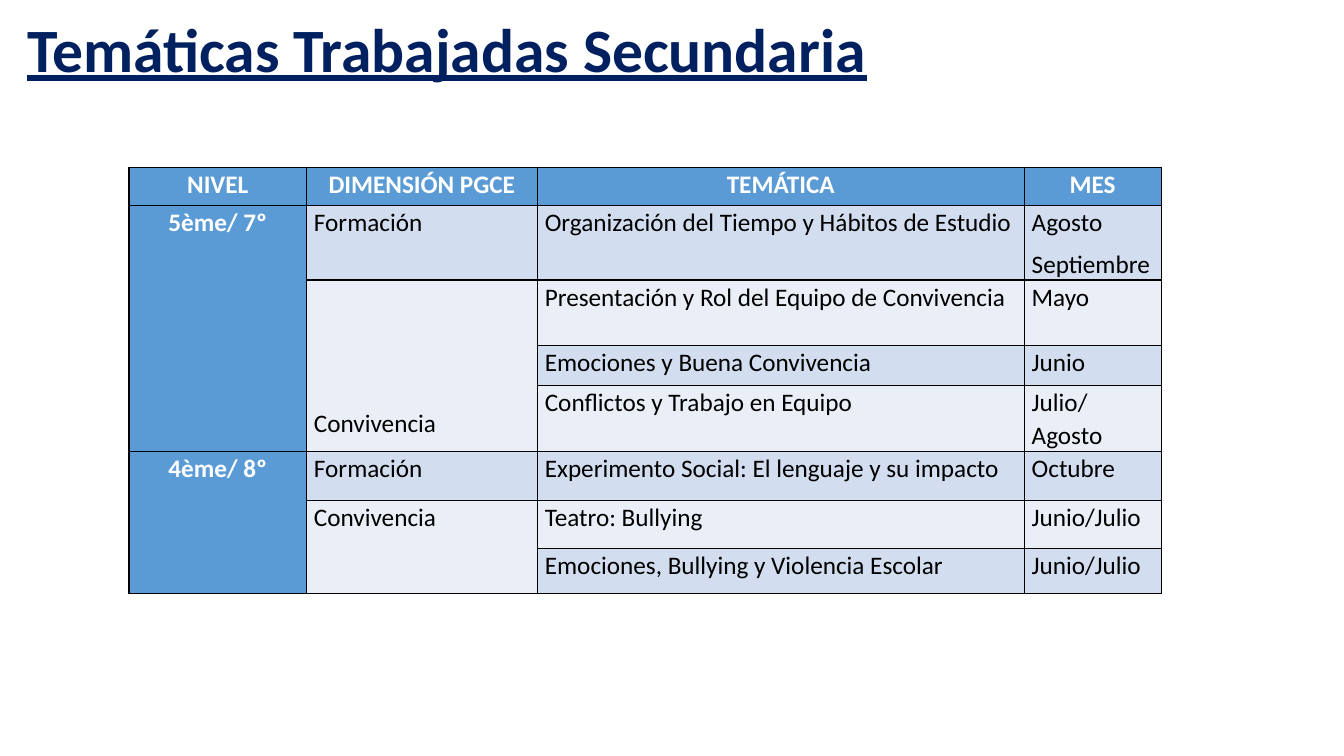
from dataclasses import dataclass

from lxml.etree import SubElement
from pptx import Presentation
from pptx.dml.color import RGBColor
from pptx.enum.text import MSO_ANCHOR, PP_ALIGN
from pptx.oxml.ns import qn
from pptx.slide import Slide
from pptx.table import Table, _Cell
from pptx.util import Pt


@dataclass(frozen=True)
class Theme:
    font: str = "Calibri"
    head: int = 44
    body: int = 18
    navy: str = "002060"
    blue: str = "5B9BD5"
    bands: tuple[str, str] = ("D2DEEF", "EAEFF7")
    white: str = "FFFFFF"
    black: str = "000000"


@dataclass(frozen=True)
class Entry:
    row: int
    col: int
    text: str
    span: int = 1
    low: bool = False


THEME = Theme()
WIDTHS = (126.7, 164.9, 347.8, 97.9)
HEIGHTS = (27.5, 53, 46.5, 29, 46.5, 35, 34.5, 32)
HEADS = ("NIVEL", "DIMENSIÓN PGCE", "TEMÁTICA", "MES")
GROUPS = (
    Entry(1, 0, "5ème/ 7º", 4),
    Entry(1, 1, "Formación"),
    Entry(2, 1, "Convivencia", 3, True),
    Entry(5, 0, "4ème/ 8º", 3),
    Entry(5, 1, "Formación"),
    Entry(6, 1, "Convivencia", 2),
)
TOPICS = (
    ("Organización del Tiempo y Hábitos de Estudio", "Agosto\nSeptiembre"),
    ("Presentación y Rol del Equipo de Convivencia", "Mayo"),
    ("Emociones y Buena Convivencia", "Junio"),
    ("Conflictos y Trabajo en Equipo", "Julio/Agosto"),
    ("Experimento Social: El lenguaje y su impacto", "Octubre"),
    ("Teatro: Bullying", "Junio/Julio"),
    ("Emociones, Bullying y Violencia Escolar", "Junio/Julio"),
)


def add_title(slide: Slide, text: str) -> None:
    title = slide.shapes.title
    title.left, title.top = Pt(12.25), Pt(-15)
    title.width, title.height = Pt(925), Pt(104.5)
    frame = title.text_frame
    frame.text = text
    frame.word_wrap = True
    frame.vertical_anchor = MSO_ANCHOR.MIDDLE
    line = frame.paragraphs[0]
    line.alignment = PP_ALIGN.LEFT
    line.line_spacing = 0.9
    font = line.font
    font.name, font.size = THEME.font, Pt(THEME.head)
    font.bold = font.underline = True
    font.color.rgb = RGBColor.from_string(THEME.navy)


def style_cell(cell: _Cell, row: int, col: int) -> None:
    props = cell._tc.get_or_add_tcPr()
    for side in ("lnL", "lnR", "lnT", "lnB"):
        edge = SubElement(props, qn(f"a:{side}"), w=str(Pt(1)))
        fill = SubElement(edge, qn("a:solidFill"))
        SubElement(fill, qn("a:srgbClr"), val=THEME.black)
    strong = row == 0 or col == 0
    tone = THEME.blue if strong else THEME.bands[(row - 1) % 2]
    cell.fill.solid()
    cell.fill.fore_color.rgb = RGBColor.from_string(tone)
    cell.margin_left = cell.margin_right = Pt(5.4)
    cell.margin_top = cell.margin_bottom = Pt(0)


def write_cell(table: Table, entry: Entry) -> None:
    cell = table.cell(entry.row, entry.col)
    if entry.span > 1:
        cell.merge(table.cell(entry.row + entry.span - 1, entry.col))
    if entry.low:
        cell.vertical_anchor = MSO_ANCHOR.BOTTOM
        cell.margin_bottom = Pt(9)
    strong = entry.row == 0 or entry.col == 0
    cell.text_frame.text = entry.text
    for line in cell.text_frame.paragraphs:
        line.alignment = PP_ALIGN.CENTER if strong else PP_ALIGN.JUSTIFY
        line.line_spacing = 1.07
        line.space_before = Pt(6)
        line.font.name, line.font.size = THEME.font, Pt(THEME.body)
        line.font.bold = strong
        line.font.color.rgb = RGBColor.from_string(THEME.white if strong else THEME.black)


def add_grid(slide: Slide) -> None:
    table = slide.shapes.add_table(
        len(HEIGHTS), len(WIDTHS), Pt(92.2), Pt(119.5), Pt(sum(WIDTHS)), Pt(sum(HEIGHTS))
    ).table
    table.first_row = table.horz_banding = False
    for column, width in zip(table.columns, WIDTHS):
        column.width = Pt(width)
    for line, height in zip(table.rows, HEIGHTS):
        line.height = Pt(height)
    for row in range(len(HEIGHTS)):
        for col in range(len(WIDTHS)):
            style_cell(table.cell(row, col), row, col)
    heads = [Entry(0, col, text) for col, text in enumerate(HEADS)]
    topics = [
        Entry(row, col, text)
        for row, pair in enumerate(TOPICS, 1)
        for col, text in enumerate(pair, 2)
    ]
    for entry in (*heads, *GROUPS, *topics):
        write_cell(table, entry)


def main() -> None:
    deck = Presentation()
    deck.slide_width, deck.slide_height = Pt(960), Pt(540)
    slide = deck.slides.add_slide(deck.slide_layouts.get_by_name("Title Only"))
    add_title(slide, "Temáticas Trabajadas Secundaria")
    add_grid(slide)
    deck.save("out.pptx")


if __name__ == "__main__":
    main()
